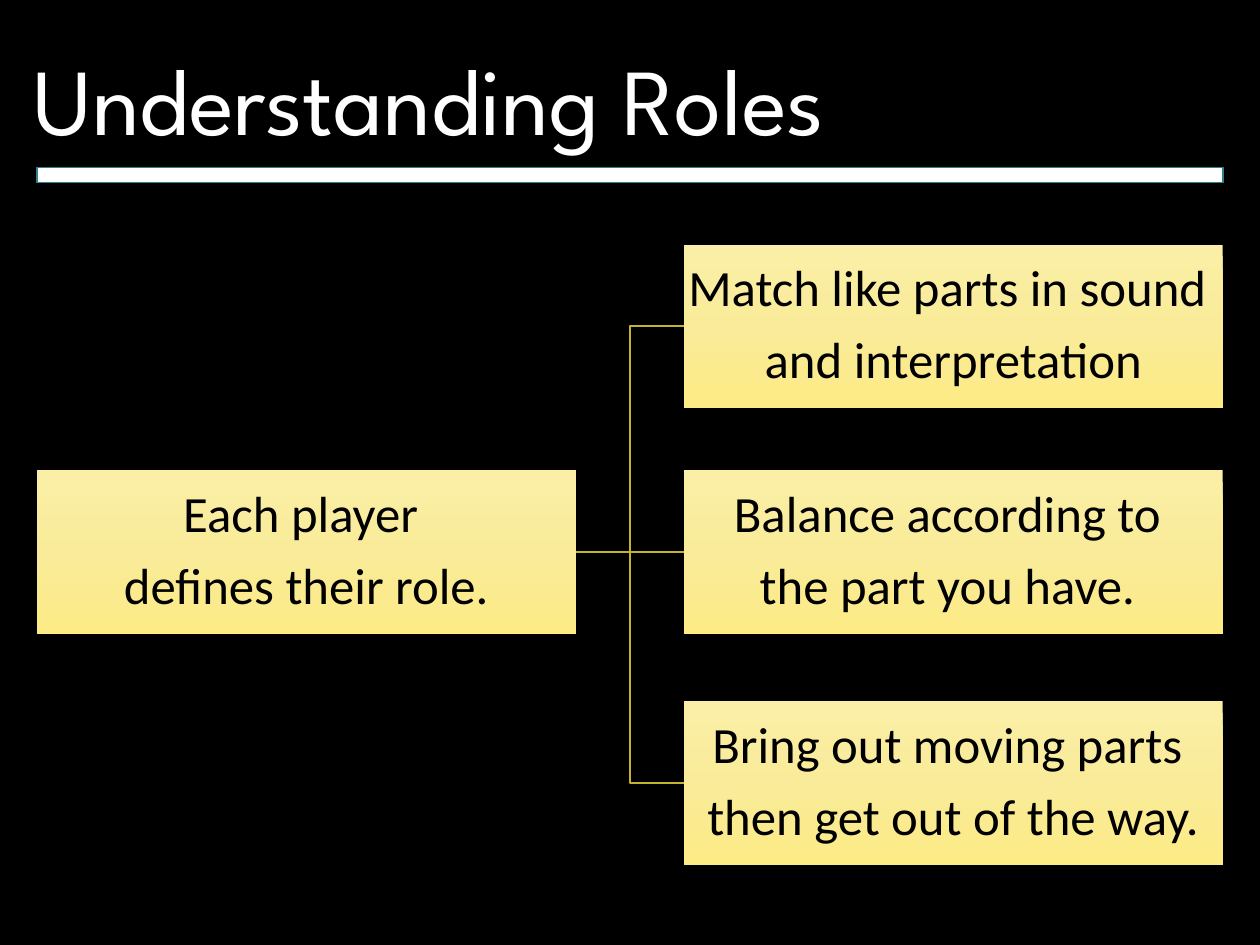
from copy import deepcopy

from pptx import Presentation
from pptx import util as u
from pptx.dml.color import RGBColor
from pptx.enum import shapes, text
from pptx.oxml import ns, xmlchemy

# Content
TITLE = "Understanding Roles"
ROOT = ("Each player ", "defines their role.")
ROLES = [
    (4.93, ("Match like parts in sound ", "and interpretation")),
    (9.48, ("Balance according to ", "the part you have. ")),
    (14.14, ("Bring out moving parts ", "then get out of the way.")),
]
STOPS = [(0, "FBEFA7"), (0.5, "F9EB99"), (1, "FDEB85")]
GOLD, TEAL, WHITE, BLACK = "C3B22E", "30818C", "FFFFFF", "000000"

# Layout in cm
LEFT, RIGHT = 0.75, 13.79
WIDE, HIGH = 10.86, 3.3


def color(code):
    return RGBColor.from_string(code)


def style(para, face, size, code):
    para.line_spacing = 0.9
    para.font.name = face
    para.font.size = u.Pt(size)
    para.font.color.rgb = color(code)


def rect(x, y, w, h):
    shape = slide.shapes.add_shape(
        shapes.MSO_SHAPE.RECTANGLE, u.Cm(x), u.Cm(y), u.Cm(w), u.Cm(h))
    shape.shadow.inherit = False
    return shape


def shade(shape):
    shape.fill.gradient()
    shape.fill.gradient_angle = 270
    stops = shape._element.spPr.find(".//" + ns.qn("a:gsLst"))
    stops.insert(1, deepcopy(stops[0]))
    for stop, (pos, code) in zip(shape.fill.gradient_stops, STOPS):
        stop.position = pos
        stop.color.rgb = color(code)


def box(x, y, lines):
    shape = rect(x, y, WIDE, HIGH)
    shade(shape)
    shape.line.fill.background()
    frame = shape.text_frame
    frame.word_wrap = True
    frame.vertical_anchor = text.MSO_ANCHOR.MIDDLE
    frame.margin_left = frame.margin_right = u.Cm(0.05)
    frame.margin_top = frame.margin_bottom = u.Cm(0.05)
    frame.text = "\n".join(lines)
    for para in frame.paragraphs:
        para.alignment = text.PP_ALIGN.CENTER
        para.space_after = u.Pt(10)
        style(para, "Calibri", 29, BLACK)
    return shape


def link(start, end):
    kinds = shapes.MSO_CONNECTOR
    kind = kinds.STRAIGHT if start.top == end.top else kinds.ELBOW
    line = slide.shapes.add_connector(kind, 0, 0, 0, 0)
    line.begin_connect(start, 3)
    line.end_connect(end, 1)
    line.line.color.rgb = color(GOLD)
    line.line.width = u.Pt(1)
    line._element.spPr.append(xmlchemy.OxmlElement("a:effectLst"))


deck = Presentation()
deck.slide_width, deck.slide_height = u.Cm(25.4), u.Cm(19.05)
slide = deck.slides.add_slide(deck.slide_layouts[6])
slide.background.fill.solid()
slide.background.fill.fore_color.rgb = color(BLACK)

# Title and rule
head = slide.shapes.add_textbox(
    u.Cm(0.43), u.Cm(0.43), u.Cm(24.55), u.Cm(3.38)).text_frame
head.word_wrap = True
head.vertical_anchor = text.MSO_ANCHOR.MIDDLE
head.text = TITLE
style(head.paragraphs[0], "League Spartan", 54, WHITE)

bar = rect(0.74, 3.38, 23.92, 0.3)
bar.fill.solid()
bar.fill.fore_color.rgb = color(WHITE)
bar.line.color.rgb = color(TEAL)
bar.line.width = u.Pt(1)

# Role tree
root = box(LEFT, ROLES[1][0], ROOT)
for top, lines in ROLES:
    link(root, box(RIGHT, top, lines))

deck.save("out.pptx")
